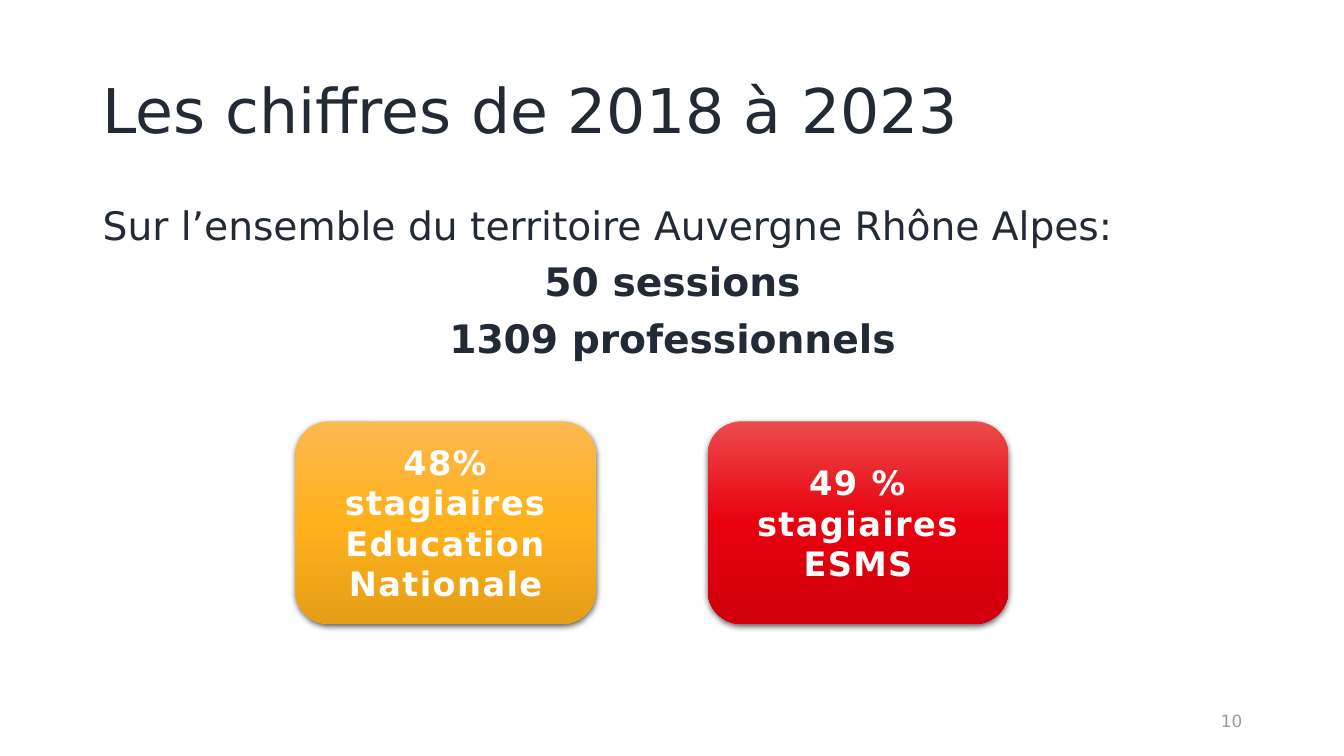
from pptx import Presentation
from pptx.dml.color import RGBColor
from pptx.enum.shapes import MSO_SHAPE as Shape
from pptx.enum.text import MSO_ANCHOR as Anchor, PP_ALIGN as Align
from pptx.oxml import parse_xml
from pptx.oxml.ns import nsdecls
from pptx.util import Pt

PX = 9144  # 100 px to the inch
FONT = "DejaVu Sans"
INK, GREY, WHITE = "222A35", "9A9A9A", "FFFFFF"


def rgb(code):
    return RGBColor.from_string(code)


def write(frame, *lines, size, color, bold=(), align=(), anchor=Anchor.TOP,
          lead=None, gap=None, track=None):
    """Fill a text frame; bold and align hold one value per line."""
    frame.word_wrap = True
    frame.vertical_anchor = anchor
    for i, text in enumerate(lines):
        par = frame.paragraphs[0] if i == 0 else frame.add_paragraph()
        par.alignment = align[i] if align else Align.LEFT
        par.line_spacing = lead
        if i and gap:
            par.space_before = Pt(gap)
        run = par.add_run()
        run.text = text
        font = run.font
        font.name, font.size = FONT, Pt(size)
        font.bold = bold[i] if bold else False
        font.color.rgb = rgb(color)
        if track:
            run._r.get_or_add_rPr().set("spc", str(track * 100))


prs = Presentation()
prs.slide_width, prs.slide_height = 1333 * PX, 750 * PX
slide = prs.slides.add_slide(prs.slide_layouts[6])
shapes = slide.shapes

title = shapes.add_textbox(92 * PX, 40 * PX, 1150 * PX, 145 * PX)
write(title.text_frame, "Les chiffres de 2018 à 2023",
      size=44, color=INK, anchor=Anchor.MIDDLE, lead=0.9)

body = shapes.add_textbox(92 * PX, 200 * PX, 1150 * PX, 476 * PX)
write(body.text_frame, "Sur l’ensemble du territoire Auvergne Rhône Alpes:",
      "50 sessions", "1309 professionnels",
      size=28, color=INK, bold=(False, True, True),
      align=(Align.LEFT, Align.CENTER, Align.CENTER), lead=0.9, gap=10)

number = shapes.add_textbox(942 * PX, 695 * PX, 300 * PX, 40 * PX)
write(number.text_frame, "10", size=12, color=GREY,
      align=(Align.RIGHT,), anchor=Anchor.MIDDLE)

cards = [
    (293, "48% stagiaires Education Nationale", ("FCB851", "FFB11C", "E59E17")),
    (702, "49 % stagiaires ESMS", ("EC4B4C", "E9000E", "CF000C")),
]
for left, text, shades in cards:
    card = shapes.add_shape(Shape.ROUNDED_RECTANGLE,
                            left * PX, 418 * PX, 298 * PX, 201 * PX)
    card.line.fill.background()
    card.shadow.inherit = False
    props = card._element.spPr
    stops = "".join(
        f'<a:gs pos="{i * 50000}"><a:srgbClr val="{shade}"/></a:gs>'
        for i, shade in enumerate(shades))
    props.find("{*}prstGeom").addnext(parse_xml(
        f'<a:gradFill {nsdecls("a")} rotWithShape="1"><a:gsLst>{stops}</a:gsLst>'
        '<a:lin ang="5400000" scaled="0"/></a:gradFill>'))
    props.find("{*}effectLst").append(parse_xml(
        f'<a:outerShdw {nsdecls("a")} blurRad="{Pt(4.5)}" dist="{Pt(1.5)}" '
        'dir="5400000" algn="ctr" rotWithShape="0"><a:srgbClr val="000000">'
        '<a:alpha val="63000"/></a:srgbClr></a:outerShdw>'))
    write(card.text_frame, text, size=24, color=WHITE, bold=(True,),
          align=(Align.CENTER,), anchor=Anchor.MIDDLE, track=1)

prs.save("out.pptx")
